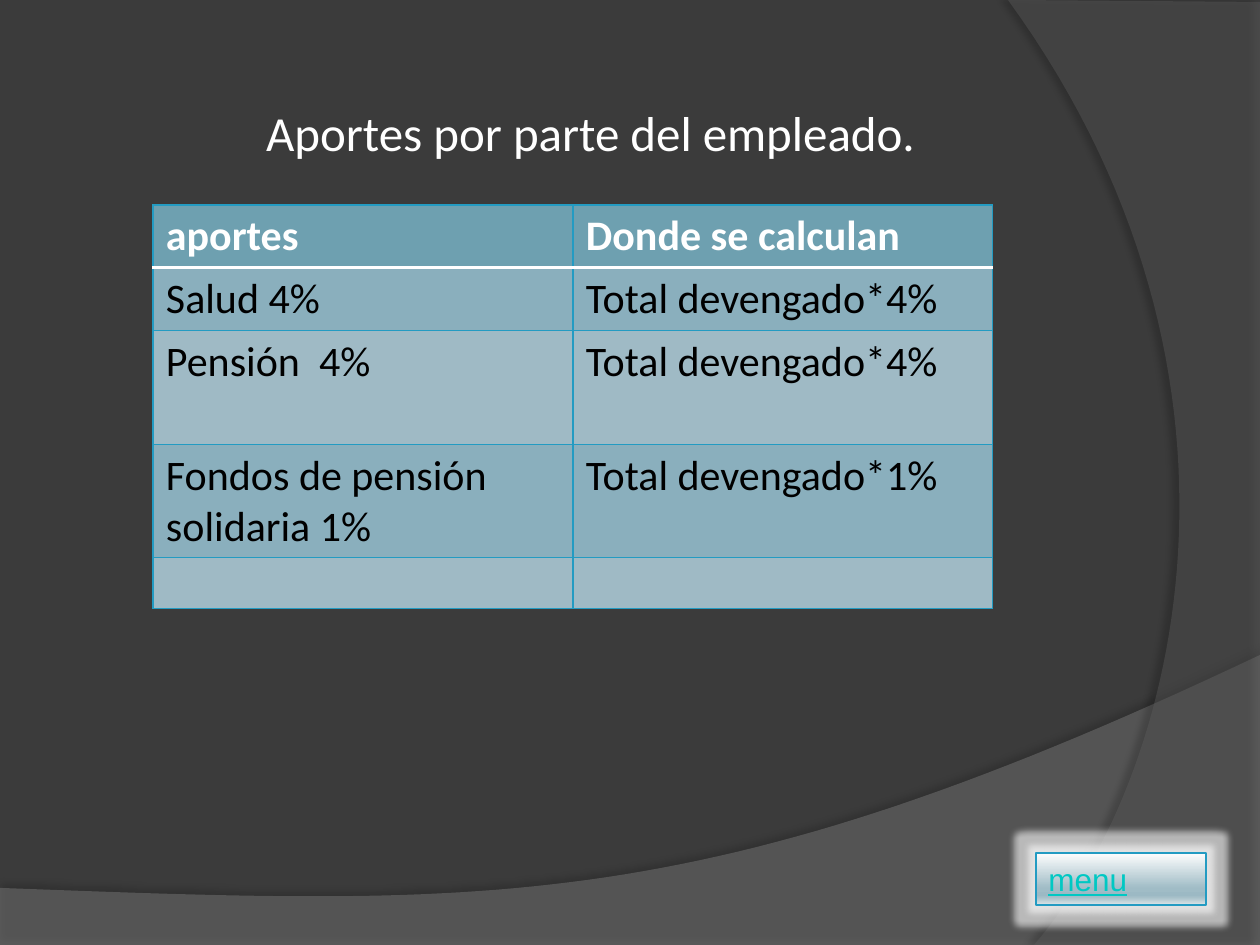
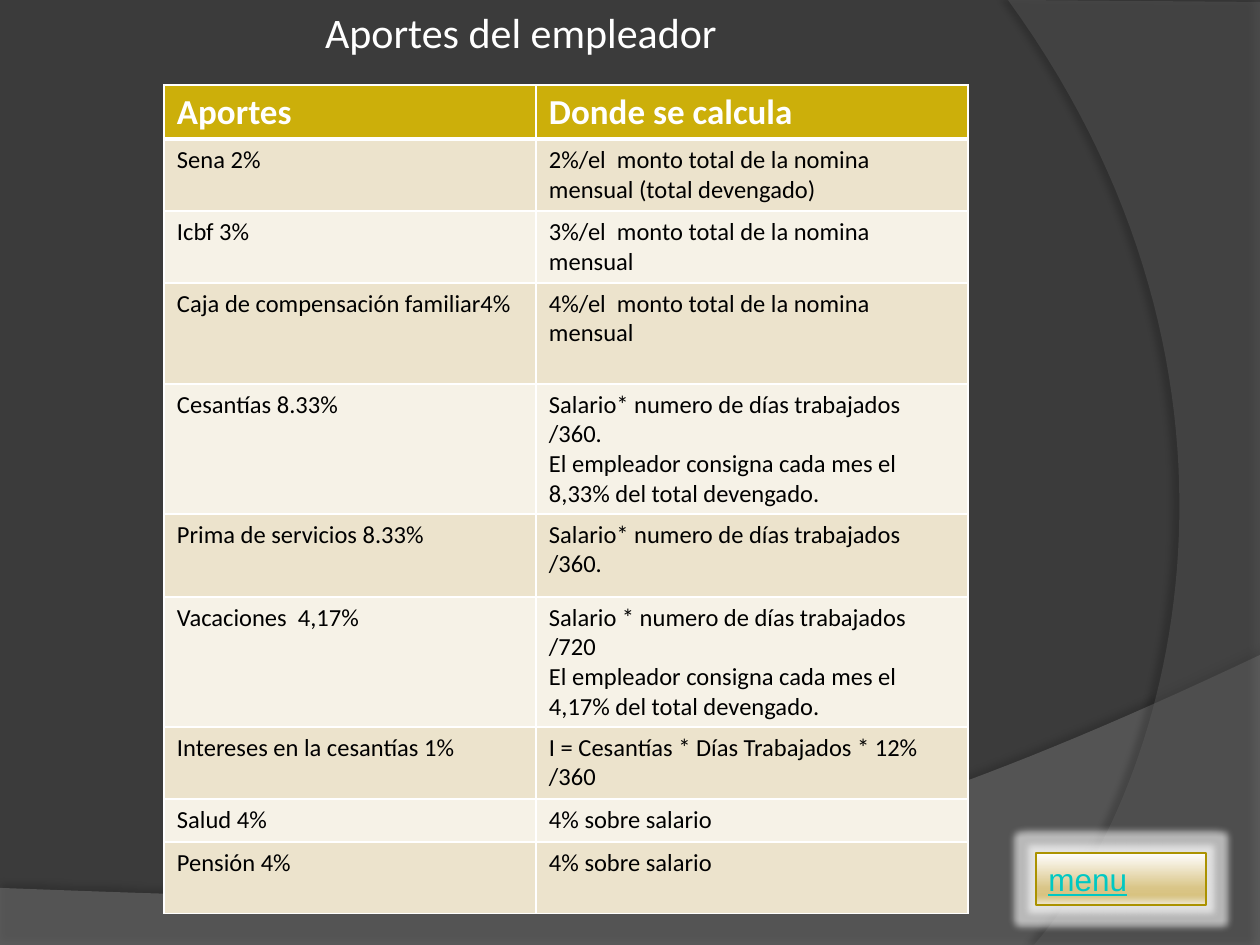
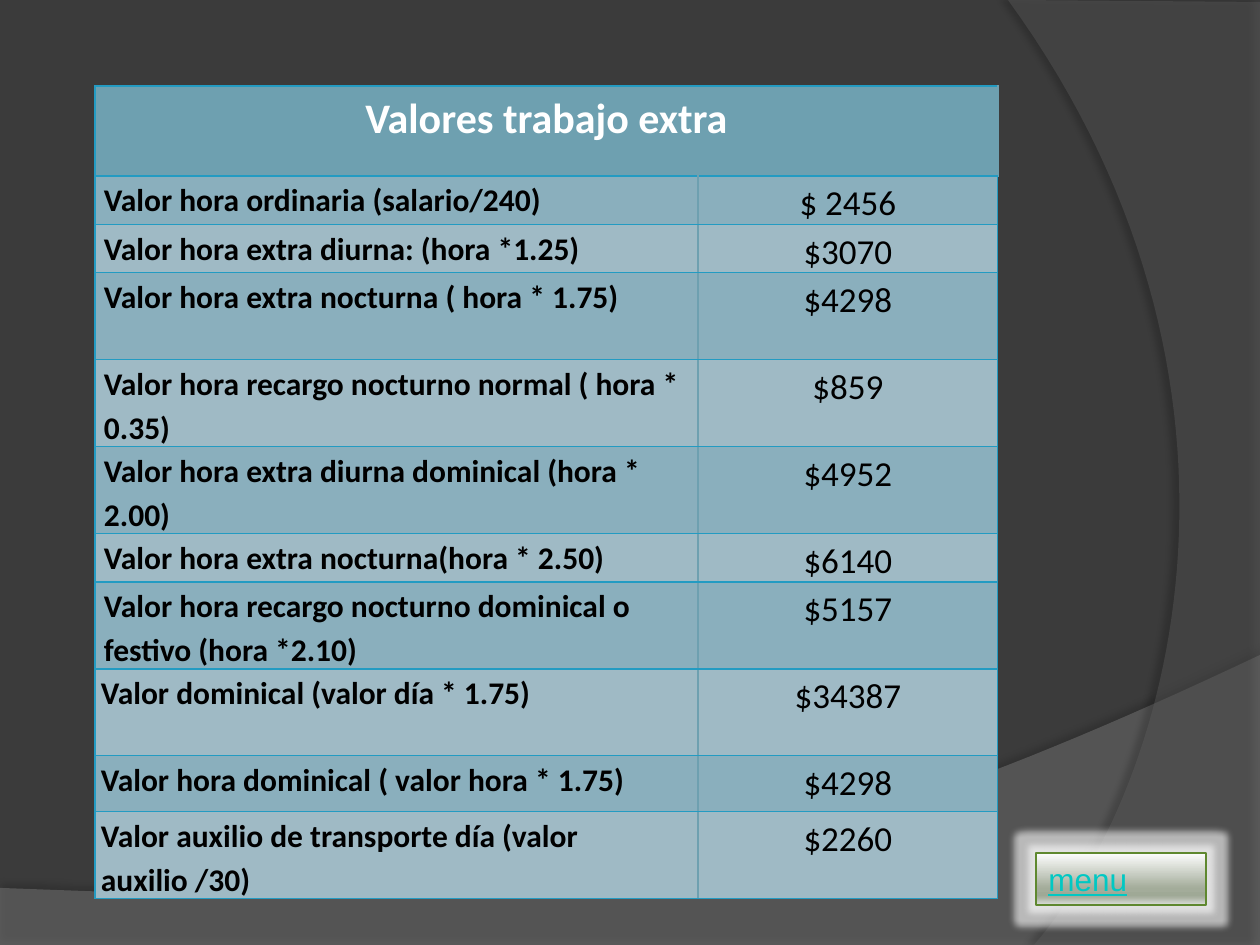
"""Build three payroll slides with tables over a shared dark curved backdrop."""
import dataclasses
import typing

import pptx
import pptx.dml.color
import pptx.enum.shapes
import pptx.enum.text
import pptx.oxml
import pptx.oxml.ns
import pptx.util

EMU_PER_PX = 914400 / 126
WIDTH, HEIGHT = 1260, 945
WHITE, BLACK = "FFFFFF", "000000"
TEAL, TEAL_LINE = "6EA0B0", "239BC2"
TEAL_BANDS = ("8AAFBD", "9FBAC5")
GOLD, GOLD_BANDS = "CCAF0A", ("ECE3CC", "F6F2E7")
LINK = "00C8C3"
LEFT = pptx.enum.text.PP_ALIGN.LEFT
CENTER = pptx.enum.text.PP_ALIGN.CENTER
Point = tuple[float, float]


class Border(typing.NamedTuple):
    color: str
    points: float


class Column(typing.NamedTuple):
    width: int
    size: int
    bold: bool = False
    align: typing.Any = LEFT


class Row(typing.NamedTuple):
    height: int
    texts: tuple[str, ...]
    inset: int = 13


class Band(typing.NamedTuple):
    corners: tuple[Point, ...]
    curve: tuple[Point, Point, Point]
    color: str
    opacity: int
    shadow_opacity: int
    shadow_distance: float
    shadow_angle: int


@dataclasses.dataclass
class Title:
    text: str
    left: int
    top: int
    width: int
    height: int
    size: int


@dataclasses.dataclass
class Grid:
    left: int
    top: int
    columns: tuple[Column, ...]
    rows: tuple[Row, ...]
    header_fill: str
    header_size: int
    bands: tuple[str, str]
    border: Border
    header_rule: Border
    divider: Border
    header_align: typing.Any = LEFT
    merged_header: bool = False
    edge: int = 6
    spacing: float = 1.0


@dataclasses.dataclass
class Button:
    line: str
    stops: tuple[str, ...]


@dataclasses.dataclass
class Page:
    grid: Grid
    button: Button
    title: Title | None = None


BANDS = (
    Band(((0, 888), (0, 945), (1260, 945), (1260, 655)),
         ((704, 919), (493, 906), (0, 888)), "7F7F7F", 45, 35, 3.5, 270),
    Band(((1260, 2), (1260, 945), (1034, 945)),
         ((1178, 780), (1283, 378), (1008, 0)), "5E5E5E", 40, 45, 4, 180),
)
STOP_POSITIONS = (0, 68, 81, 86, 100)

EMPLOYEE = Grid(
    153, 205, (Column(420, 24), Column(420, 24)),
    (
        Row(62, ("aportes", "Donde se calculan")),
        Row(63, ("Salud 4%", "Total devengado*4%")),
        Row(114, ("Pensión  4%", "Total devengado*4%")),
        Row(113, ("Fondos de pensión solidaria 1%", "Total devengado*1%")),
        Row(51, ("", "")),
    ),
    TEAL, 24, TEAL_BANDS, Border(TEAL_LINE, 0.75), Border(WHITE, 1.5), Border(TEAL_LINE, 0.75),
)

EMPLOYER = Grid(
    164, 85, (Column(372, 14), Column(432, 14)),
    (
        Row(53, ("Aportes", "Donde se calcula")),
        Row(72, ("Sena 2%", "2%/el  monto total de la nomina mensual (total devengado)")),
        Row(72, ("Icbf 3%", "3%/el  monto total de la nomina mensual")),
        Row(101, ("Caja de compensación familiar4%", "4%/el  monto total de la nomina mensual")),
        Row(130, ("Cesantías 8.33%",
                  "Salario* numero de días trabajados /360.\n"
                  "El empleador consigna cada mes el 8,33% del total devengado.")),
        Row(83, ("Prima de servicios 8.33%", "Salario* numero de días trabajados /360.")),
        Row(130, ("Vacaciones  4,17%",
                  "Salario * numero de días trabajados /720\n"
                  "El empleador consigna cada mes el 4,17% del total devengado.")),
        Row(72, ("Intereses en la cesantías 1%", "I = Cesantías * Días Trabajados * 12% /360")),
        Row(43, ("Salud 4%", "4% sobre salario")),
        Row(72, ("Pensión 4%", "4% sobre salario")),
    ),
    GOLD, 20, GOLD_BANDS, Border(WHITE, 1), Border(WHITE, 3), Border(WHITE, 1),
)

EXTRA_WORK = Grid(
    95, 86, (Column(603, 18, True), Column(300, 20, False, CENTER)),
    (
        Row(90, ("Valores trabajo extra", ""), 9),
        Row(48, ("Valor hora ordinaria (salario/240)", "$ 2456"), 9),
        Row(48, ("Valor hora extra diurna: (hora *1.25)", "$3070"), 9),
        Row(87, ("Valor hora extra nocturna ( hora * 1.75)", "$4298"), 9),
        Row(87, ("Valor hora recargo nocturno normal ( hora * 0.35)", "$859"), 9),
        Row(87, ("Valor hora extra diurna dominical (hora * 2.00)", "$4952"), 9),
        Row(48, ("Valor hora extra nocturna(hora * 2.50)", "$6140"), 9),
        Row(87, ("Valor hora recargo nocturno dominical o festivo (hora *2.10)", "$5157"), 9),
        Row(87, ("Valor dominical (valor día * 1.75)", "$34387"), 6),
        Row(56, ("Valor hora dominical ( valor hora * 1.75)", "$4298"), 6),
        Row(87, ("Valor auxilio de transporte día (valor auxilio /30)", "$2260"), 6),
    ),
    TEAL, 24, TEAL_BANDS, Border(TEAL_LINE, 0.75), Border(TEAL_LINE, 0.75), Border(TEAL, 1.5),
    header_align=CENTER, merged_header=True, edge=0, spacing=1.15,
)

PAGES = (
    Page(EMPLOYEE, Button(TEAL_LINE, ("FEFEFE", "A0BCC6", "9CB9C4", "A7C0C9", "DAE4E7")),
         Title("Aportes por parte del empleado.", 95, 96, 991, 72, 28)),
    Page(EMPLOYER, Button("AB9200", ("FFFEFE", "D9C587", "D8C381", "DBC990", "EFE7D3")),
         Title("Aportes del empleador", 243, 0, 556, 63, 24)),
    Page(EXTRA_WORK, Button("5F882F", ("FEFEFE", "A3AC9A", "9FA996", "A9B1A1", "DBDED9"))),
)


def px(length: float) -> pptx.util.Emu:
    return pptx.util.Emu(round(length * EMU_PER_PX))


def rgb(color: str) -> pptx.dml.color.RGBColor:
    return pptx.dml.color.RGBColor.from_string(color)


def assign(target: typing.Any, values: dict[str, typing.Any]) -> None:
    for name, value in values.items():
        setattr(target, name, value)


def element(markup: str) -> typing.Any:
    tag, rest = markup[1:].split(" ", 1) if " " in markup.split(">")[0] else markup[1:].split(">", 1)
    gap = " " if " " in markup.split(">")[0] else ">"
    return pptx.oxml.parse_xml(f"<{tag} {pptx.oxml.ns.nsdecls('a')}{gap}{rest}")


def paint(fill: typing.Any, color: str) -> None:
    fill.solid()
    fill.fore_color.rgb = rgb(color)


def style(para: typing.Any, font: dict[str, typing.Any], color: str,
          align: typing.Any = LEFT, spacing: float = 1.0) -> None:
    assign(para, {"alignment": align, "line_spacing": spacing})
    for span in para.runs:
        assign(span.font, font)
        span.font.color.rgb = rgb(color)


def set_effect(shape: typing.Any, effect: str) -> None:
    shape.shadow.inherit = False
    shape.element.spPr.find(pptx.oxml.ns.qn("a:effectLst")).append(element(effect))


def bezier(start: Point, curve: tuple[Point, Point, Point], steps: int = 60) -> list[Point]:
    points = (start, *curve)
    result = []
    for step in range(1, steps + 1):
        t = step / steps
        weights = ((1 - t) ** 3, 3 * t * (1 - t) ** 2, 3 * t * t * (1 - t), t ** 3)
        result.append(tuple(sum(w * p[axis] for w, p in zip(weights, points)) for axis in (0, 1)))
    return result


def draw_band(slide: typing.Any, band: Band) -> None:
    outline = [*band.corners, *bezier(band.corners[-1], band.curve)]
    points = [(px(x), px(y)) for x, y in outline]
    builder = slide.shapes.build_freeform(*points[0], scale=1.0)
    builder.add_line_segments(points[1:], close=True)
    shape = builder.convert_to_shape()
    paint(shape.fill, band.color)
    shape.line.fill.background()
    solid = shape.element.spPr.find(pptx.oxml.ns.qn("a:solidFill"))
    solid[0].append(element(f'<a:alpha val="{band.opacity * 1000}"/>'))
    set_effect(shape, f'<a:outerShdw blurRad="{pptx.util.Pt(4)}" '
               f'dist="{pptx.util.Pt(band.shadow_distance)}" dir="{band.shadow_angle * 60000}">'
               f'<a:srgbClr val="{BLACK}"><a:alpha val="{band.shadow_opacity * 1000}"/>'
               '</a:srgbClr></a:outerShdw>')


def draw_title(slide: typing.Any, title: Title) -> None:
    box = slide.shapes.add_textbox(px(title.left), px(title.top), px(title.width), px(title.height))
    frame = box.text_frame
    assign(frame, {"word_wrap": True, "text": title.text})
    font = {"size": pptx.util.Pt(title.size), "name": "Calibri"}
    style(frame.paragraphs[0], font, WHITE, CENTER)


def set_borders(cell: typing.Any, grid: Grid, row: int, column: int) -> None:
    last = len(grid.columns) - 1
    edges = {
        "L": grid.divider if column > 0 else grid.border,
        "R": grid.divider if column < last else grid.border,
        "T": grid.header_rule if row == 1 else grid.border,
        "B": grid.header_rule if row == 0 else grid.border,
    }
    properties = cell._tc.get_or_add_tcPr()
    for side, border in edges.items():
        properties.append(element(
            f'<a:ln{side} w="{pptx.util.Pt(border.points)}"><a:solidFill>'
            f'<a:srgbClr val="{border.color}"/></a:solidFill></a:ln{side}>'))


def draw_grid(slide: typing.Any, grid: Grid) -> None:
    width = sum(column.width for column in grid.columns)
    height = sum(row.height for row in grid.rows)
    table = slide.shapes.add_table(len(grid.rows), len(grid.columns), px(grid.left), px(grid.top),
                                   px(width), px(height)).table
    assign(table, {"first_row": True, "horz_banding": False})
    for index, column in enumerate(grid.columns):
        table.columns[index].width = px(column.width)
    for row_index, row in enumerate(grid.rows):
        table.rows[row_index].height = px(row.height)
        header = row_index == 0
        for index, (column, text) in enumerate(zip(grid.columns, row.texts)):
            cell = table.cell(row_index, index)
            set_borders(cell, grid, row_index, index)
            paint(cell.fill, grid.header_fill if header else grid.bands[(row_index - 1) % 2])
            assign(cell, {"margin_left": px(row.inset), "margin_right": px(row.inset),
                          "margin_top": px(grid.edge), "margin_bottom": px(grid.edge)})
            if not text:
                continue
            cell.text_frame.text = text
            font = {"name": "Calibri", "bold": header or column.bold,
                    "size": pptx.util.Pt(grid.header_size if header else column.size)}
            for para in cell.text_frame.paragraphs:
                style(para, font, WHITE if header else BLACK,
                      grid.header_align if header else column.align, grid.spacing)
    if grid.merged_header:
        table.cell(0, 0).merge(table.cell(0, len(grid.columns) - 1))


def draw_button(slide: typing.Any, button: Button) -> None:
    box = slide.shapes.add_shape(pptx.enum.shapes.MSO_SHAPE.RECTANGLE,
                                 px(1036), px(853), px(170), px(52))
    box.fill.gradient()
    box.fill.gradient_angle = 270
    stops = box.element.spPr.find(".//" + pptx.oxml.ns.qn("a:gsLst"))
    for stop in list(stops):
        stops.remove(stop)
    for position, color in zip(STOP_POSITIONS, button.stops):
        stops.append(element(f'<a:gs pos="{position * 1000}"><a:srgbClr val="{color}"/></a:gs>'))
    box.line.color.rgb = rgb(button.line)
    box.line.width = pptx.util.Pt(0.75)
    set_effect(box, f'<a:glow rad="{pptx.util.Pt(8)}"><a:srgbClr val="{WHITE}">'
               '<a:alpha val="60000"/></a:srgbClr></a:glow>')
    frame = box.text_frame
    assign(frame, {"word_wrap": True, "text": "menu"})
    font = {"size": pptx.util.Pt(18), "name": "Arial", "underline": True}
    style(frame.paragraphs[0], font, LINK)


def main() -> None:
    deck = pptx.Presentation()
    assign(deck, {"slide_width": px(WIDTH), "slide_height": px(HEIGHT)})
    for page in PAGES:
        slide = deck.slides.add_slide(deck.slide_layouts[6])
        paint(slide.background.fill, "3B3B3B")
        for band in BANDS:
            draw_band(slide, band)
        if page.title:
            draw_title(slide, page.title)
        draw_grid(slide, page.grid)
        draw_button(slide, page.button)
    deck.save("out.pptx")


if __name__ == "__main__":
    main()
